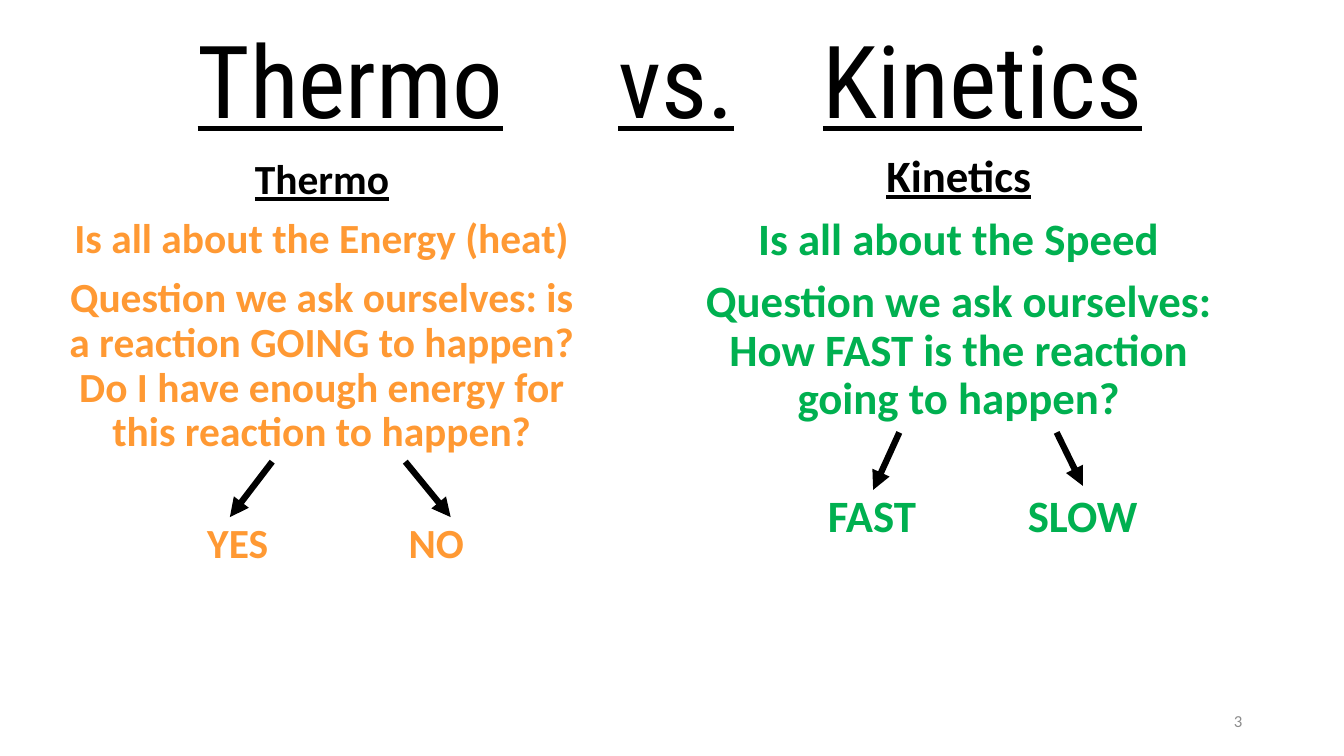
"""Build the Thermo vs. Kinetics comparison slide."""
from lxml import etree
from pptx import Presentation
from pptx import util as u
from pptx.dml.color import RGBColor
from pptx.enum import shapes, text
from pptx.oxml import ns

BLACK, ORANGE, GREEN, GRAY = "000000", "FF9933", "00B050", "8C8C8C"
ALIGN, ANCHOR = text.PP_ALIGN, text.MSO_ANCHOR

TITLE = {"words": "Thermo\tvs.\tKinetics", "box": (0.92, 0.13, 11.5, 1.45),
         "inset": 1.04, "tabs": [(4.17, "l"), (6.2, "l")]}
NUMBER = {"words": "3", "box": (9.42, 6.95, 3, 0.4)}
COLUMNS = [
    {"box": (0.51, 1.53, 5.37, 4.76), "size": 29.6, "color": ORANGE,
     "heading": "Thermo",
     "lines": ["Is all about the Energy (heat)",
               "Question we ask ourselves: is a reaction GOING to happen? "
               "Do I have enough energy for this reaction to happen?"],
     "answers": [("YES", 1.75), ("NO", 3.72)], "answer_gap": 48,
     "arrows": [(2.7, 4.58, 2.28, 5.13), (4.02, 4.58, 4.47, 5.13)]},
    {"box": (6.72, 1.48, 5.58, 4.76), "size": 32, "color": GREEN,
     "heading": "Kinetics",
     "lines": ["Is all about the Speed",
               "Question we ask ourselves: How FAST is the reaction going to happen?"],
     "answers": [("FAST", 1.83), ("SLOW", 3.92)], "answer_gap": 50,
     "arrows": [(8.92, 4.29, 8.66, 4.86), (10.48, 4.29, 10.74, 4.82)]},
]


def rgb(value):
    return RGBColor.from_string(value)


def inches(values):
    return [u.Inches(value) for value in values]


def apply(target, formats):
    for key, value in formats.items():
        setattr(target, key, value)


def write(paragraph, words, color, font, layout, tabs=()):
    apply(paragraph, layout)
    run = paragraph.add_run()
    run.text = words
    apply(run.font, font)
    run.font.color.rgb = rgb(color)
    if tabs:
        stops = etree.SubElement(paragraph._p.get_or_add_pPr(), ns.qn("a:tabLst"))
        for position, kind in tabs:
            etree.SubElement(stops, ns.qn("a:tab"), pos=str(u.Inches(position)), algn=kind)


def add_title(slide):
    title = slide.shapes.title
    apply(title, dict(zip(("left", "top", "width", "height"), inches(TITLE["box"]))))
    apply(title.text_frame, {"vertical_anchor": ANCHOR.MIDDLE, "word_wrap": True,
                             "auto_size": text.MSO_AUTO_SIZE.NONE,
                             "margin_left": u.Inches(TITLE["inset"])})
    write(title.text_frame.paragraphs[0], TITLE["words"], BLACK,
          {"name": "Roboto Condensed", "size": u.Pt(72), "underline": True},
          {"alignment": ALIGN.LEFT, "line_spacing": 0.9}, TITLE["tabs"])


def add_column(slide, column):
    frame = slide.shapes.add_textbox(*inches(column["box"])).text_frame
    frame.word_wrap = True
    font = {"name": "Calibri", "size": u.Pt(column["size"]), "bold": True}
    layout = {"alignment": ALIGN.CENTER, "line_spacing": 0.9, "space_before": u.Pt(10)}
    write(frame.paragraphs[0], column["heading"], BLACK, {**font, "underline": True}, layout)
    for line in column["lines"]:
        write(frame.add_paragraph(), line, column["color"], font, layout)
    answers = "".join("\t" + answer for answer, _ in column["answers"])
    write(frame.add_paragraph(), answers, column["color"], font,
          {**layout, "alignment": ALIGN.LEFT, "space_before": u.Pt(column["answer_gap"])},
          [(center, "ctr") for _, center in column["answers"]])
    for ends in column["arrows"]:
        add_arrow(slide, ends)


def add_arrow(slide, ends):
    arrow = slide.shapes.add_connector(shapes.MSO_CONNECTOR.STRAIGHT, *inches(ends))
    arrow.line.width = u.Pt(4.5)
    arrow.line.color.rgb = rgb(BLACK)
    etree.SubElement(arrow.line._get_or_add_ln(), ns.qn("a:tailEnd"), type="triangle")
    etree.SubElement(arrow._element.spPr, ns.qn("a:effectLst"))


def add_number(slide):
    frame = slide.shapes.add_textbox(*inches(NUMBER["box"])).text_frame
    apply(frame, {"word_wrap": True, "vertical_anchor": ANCHOR.MIDDLE})
    write(frame.paragraphs[0], NUMBER["words"], GRAY,
          {"name": "Calibri", "size": u.Pt(12)}, {"alignment": ALIGN.RIGHT})


def main():
    deck = Presentation()
    deck.slide_width, deck.slide_height = inches((13.33, 7.5))
    slide = deck.slides.add_slide(deck.slide_layouts[5])
    add_title(slide)
    for column in COLUMNS:
        add_column(slide, column)
    add_number(slide)
    deck.save("out.pptx")


if __name__ == "__main__":
    main()
